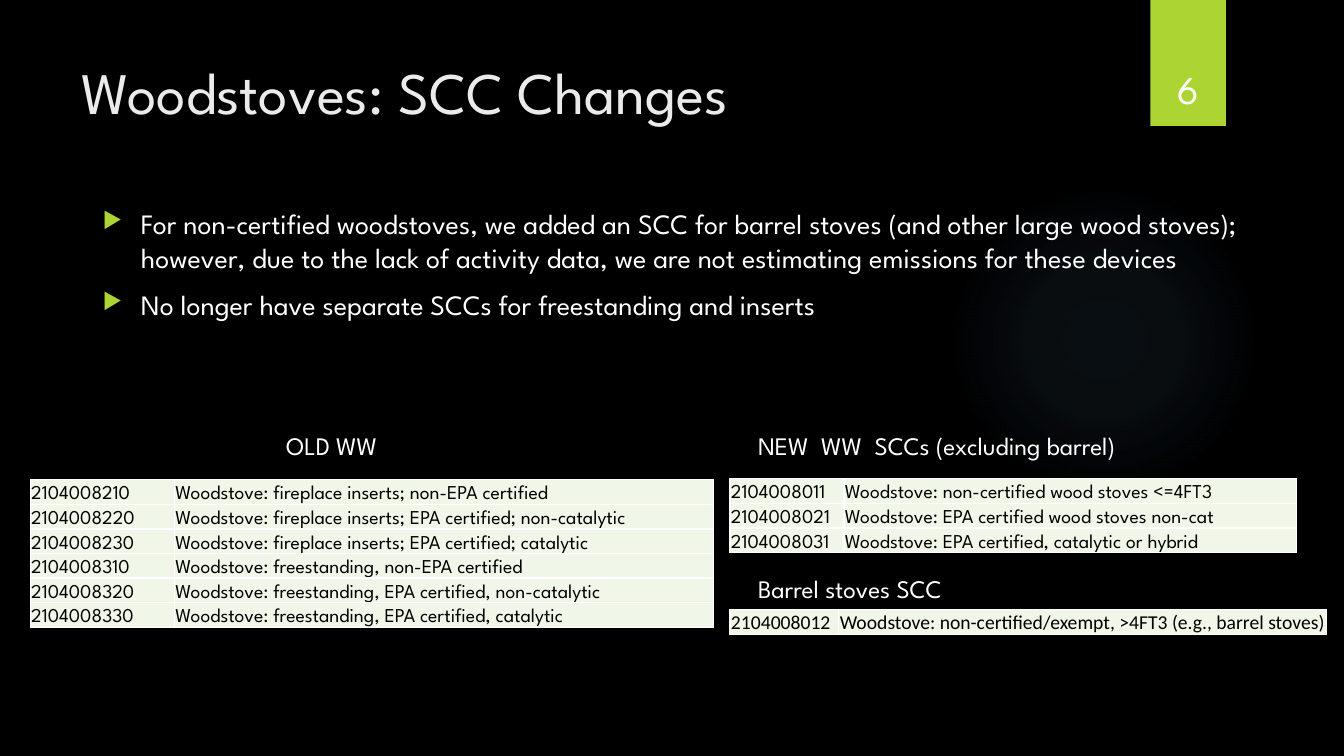
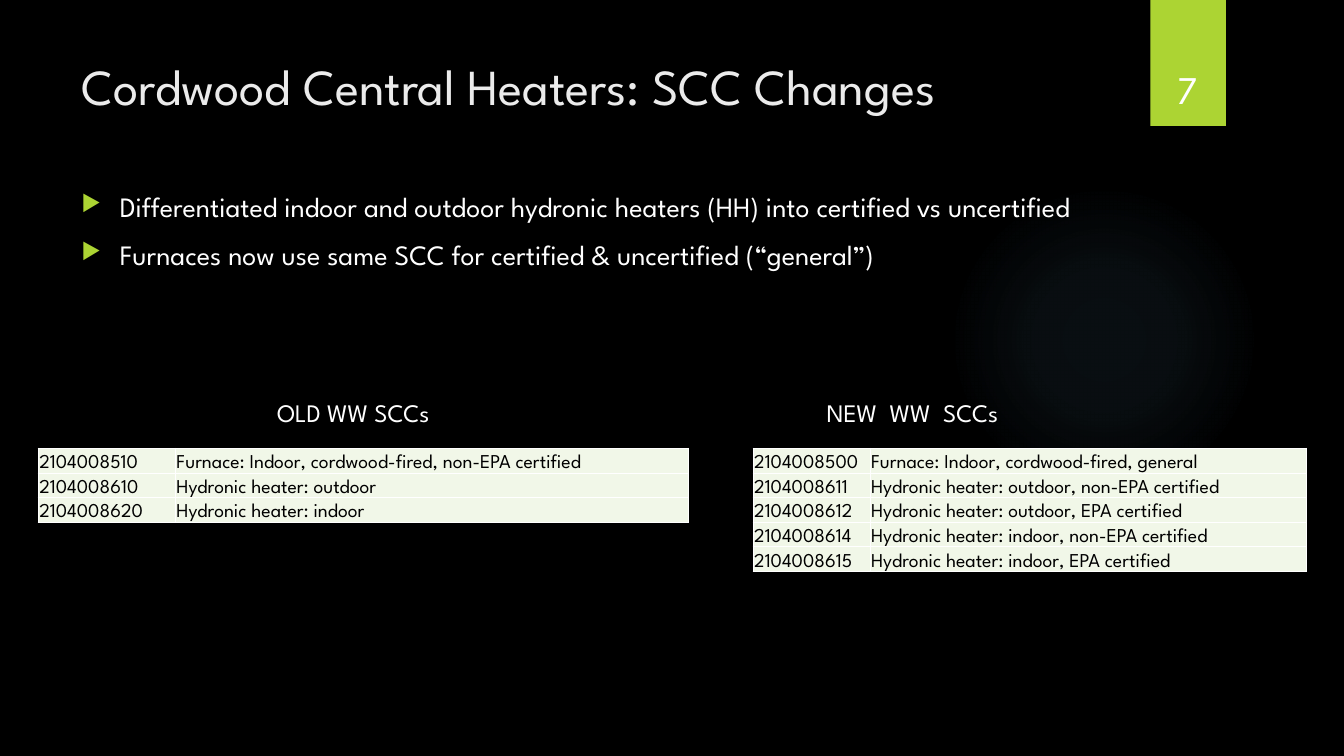
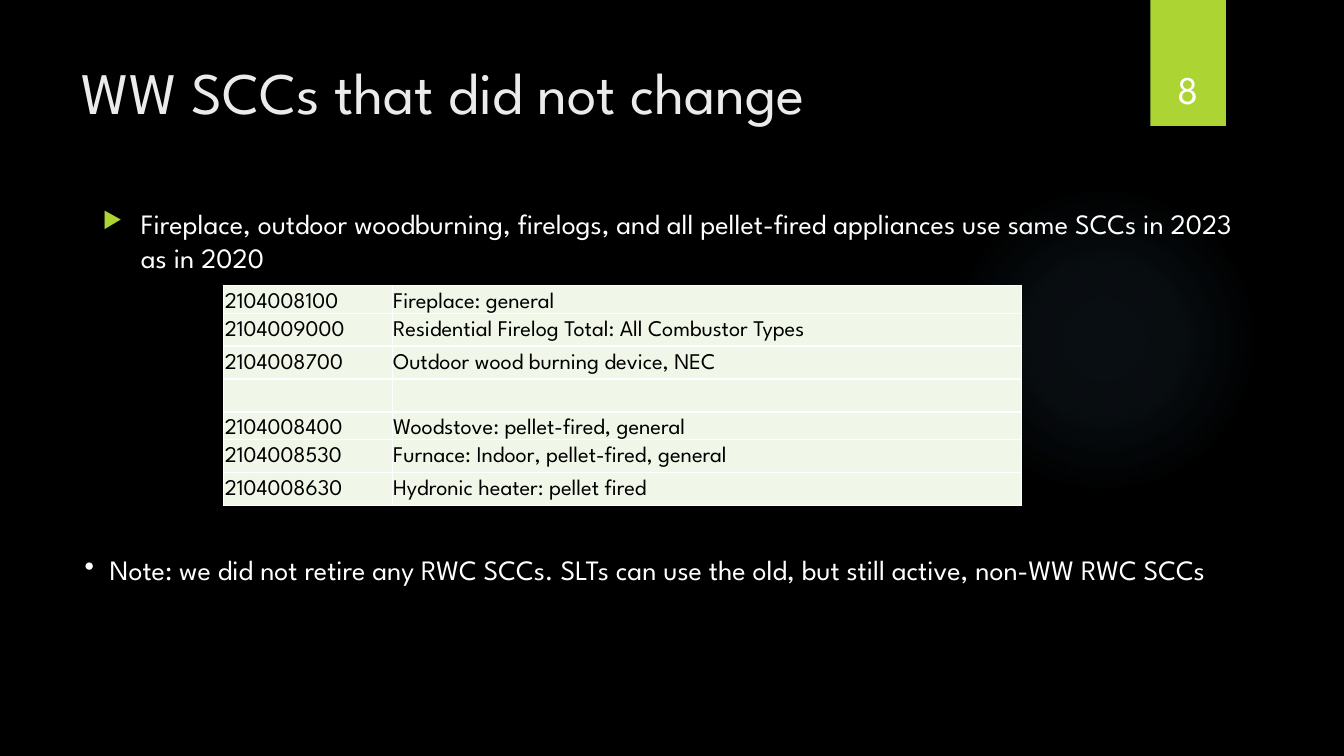
from lxml import etree
from pptx import Presentation
from pptx.dml.color import RGBColor
from pptx.enum.shapes import MSO_SHAPE
from pptx.enum.text import MSO_ANCHOR, PP_ALIGN
from pptx.oxml import parse_xml
from pptx.oxml.ns import qn
from pptx.util import Pt

# Scale: 100 px to the inch
PX = 9144
SLIDE_SIZE = (1333, 750)

BLACK = RGBColor(0x00, 0x00, 0x00)
WHITE = RGBColor(0xFF, 0xFF, 0xFF)
TITLE_GREY = RGBColor(0xEB, 0xEB, 0xEB)
LIME = RGBColor(0xAC, 0xD4, 0x33)
PALE_GREEN = RGBColor(0xF1, 0xF7, 0xE8)
GLOW_BLUE = RGBColor(0x7A, 0xC4, 0xF0)

FONT = "League Spartan"
TABLE_FONT_ALT = "Calibri"
OVAL, RECTANGLE = MSO_SHAPE.OVAL, MSO_SHAPE.RECTANGLE
TOP, BOTTOM = MSO_ANCHOR.TOP, MSO_ANCHOR.BOTTOM
LEFT, CENTER = PP_ALIGN.LEFT, PP_ALIGN.CENTER
DRAWING_NS = "http://schemas.openxmlformats.org/drawingml/2006/main"

# Shared layout: left, top, width, height
GLOW_BOX = (941, 183, 308, 308)
GLOW_STOPS = ((0, 7), (36, 6), (69, 0))  # position %, opacity %
BAND_BOX = (1141, 0, 75, 125)
NUMBER_BOX = (1132, 32, 92, 84)
TITLE_POSITION = (71, 50)
TITLE_HEIGHT = 153
LABEL_HEIGHT = 40
ROW_HEIGHT = 21
CELL_MARGIN = 1

# Bullet styles: character, indent px, colour, size %, line spacing
ARROW_BULLET = ("▶", 38, LIME, 80, None)
DOT_BULLET = ("•", 25, WHITE, 100, 0.9)

# Content
SLIDES = [
    {
        "number": 6,
        "title": ("Woodstoves: SCC Changes", 42, 1029),
        "lists": [((92, 200, 1150, 227), ARROW_BULLET, [
            "For non-certified woodstoves, we added an SCC for barrel stoves (and other large "
            "wood stoves); however, due to the lack of activity data, we are not estimating "
            "emissions for these devices",
            "No longer have separate SCCs for freestanding and inserts",
        ])],
        "labels": [
            ("OLD WW", 274, 422, 143),
            ("NEW  WW  SCCs (excluding barrel)", 742, 422, 463),
            ("Barrel stoves SCC", 742, 564, 464),
        ],
        "tables": [
            {"at": (724, 475), "columns": (113, 449), "rows": [
                ("2104008011", "Woodstove: non-certified wood stoves <=4FT3"),
                ("2104008021", "Woodstove: EPA certified wood stoves non-cat"),
                ("2104008031", "Woodstove: EPA certified, catalytic or hybrid"),
            ]},
            {"at": (30, 476), "columns": (143, 535), "rows": [
                ("2104008210", "Woodstove: fireplace inserts; non-EPA certified"),
                ("2104008220", "Woodstove: fireplace inserts; EPA certified; non-catalytic"),
                ("2104008230", "Woodstove: fireplace inserts; EPA certified; catalytic"),
                ("2104008310", "Woodstove: freestanding, non-EPA certified"),
                ("2104008320", "Woodstove: freestanding, EPA certified, non-catalytic"),
                ("2104008330", "Woodstove: freestanding, EPA certified, catalytic"),
            ]},
            {"at": (724, 605), "columns": (108, 484), "font": TABLE_FONT_ALT, "rows": [
                ("2104008012", "Woodstove: non-certified/exempt, >4FT3 (e.g., barrel stoves)"),
            ]},
        ],
    },
    {
        "number": 7,
        "title": ("Cordwood Central Heaters: SCC Changes", 36, 1062),
        "lists": [((71, 183, 1150, 145), ARROW_BULLET, [
            "Differentiated indoor and outdoor hydronic heaters (HH) into certified vs uncertified",
            "Furnaces now use same SCC for certified & uncertified (“general”)",
        ])],
        "labels": [
            ("OLD WW SCCs", 265, 389, 224),
            ("NEW  WW  SCCs", 810, 389, 463),
        ],
        "tables": [
            {"at": (747, 445), "columns": (116, 433), "heights": (21, 17, 21, 6, 21), "rows": [
                ("2104008500", "Furnace: Indoor, cordwood-fired, general"),
                ("2104008611", "Hydronic heater: outdoor, non-EPA certified"),
                ("2104008612", "Hydronic heater: outdoor, EPA certified"),
                ("2104008614", "Hydronic heater: indoor, non-EPA certified"),
                ("2104008615", "Hydronic heater: indoor, EPA certified"),
            ]},
            {"at": (38, 445), "columns": (136, 509), "heights": (18, 21, 21), "rows": [
                ("2104008510", "Furnace: Indoor, cordwood-fired, non-EPA certified"),
                ("2104008610", "Hydronic heater: outdoor"),
                ("2104008620", "Hydronic heater: indoor"),
            ]},
        ],
    },
    {
        "number": 8,
        "title": ("WW SCCs that did not change", 42, 1029),
        "lists": [
            ((92, 200, 1150, 83), ARROW_BULLET, [
                "Fireplace, outdoor woodburning, firelogs, and all pellet-fired appliances use "
                "same SCCs in 2023 as in 2020",
            ]),
            ((74, 547, 1150, 123), DOT_BULLET, [
                "Note: we did not retire any RWC SCCs. SLTs can use the old, but still active, "
                "non-WW RWC SCCs",
            ]),
        ],
        "labels": [],
        "tables": [
            {"at": (222, 283), "columns": (167, 624), "size": 16,
             "bottoms": (0, 5, 5, 5, 0, 5, 5), "rows": [
                 ("2104008100", "Fireplace: general"),
                 ("2104009000", "Residential Firelog Total: All Combustor Types"),
                 ("2104008700", "Outdoor wood burning device, NEC"),
                 ("", ""),
                 ("2104008400", "Woodstove: pellet-fired, general"),
                 ("2104008530", "Furnace: Indoor, pellet-fired, general"),
                 ("2104008630", "Hydronic heater: pellet fired"),
             ]},
        ],
    },
]


def emu(lengths):
    return [length * PX for length in lengths]


def add_run(paragraph, text, size, color, font=FONT):
    run = paragraph.add_run()
    run.text = text
    run.font.size = Pt(size)
    run.font.name = font
    run.font.color.rgb = color


def add_frame(slide, box, anchor=TOP):
    frame = slide.shapes.add_textbox(*emu(box)).text_frame
    frame.word_wrap = True
    frame.vertical_anchor = anchor
    return frame


def add_text(slide, box, text, size, color, anchor=TOP, align=LEFT):
    paragraph = add_frame(slide, box, anchor).paragraphs[0]
    paragraph.alignment = align
    add_run(paragraph, text, size, color)


def add_plain_shape(slide, kind, box):
    shape = slide.shapes.add_shape(kind, *emu(box))
    shape.shadow.inherit = False
    shape.line.fill.background()
    return shape


# Backdrop shared by all slides
def add_backdrop(slide):
    glow = add_plain_shape(slide, OVAL, GLOW_BOX)
    stops = "".join(
        f'<a:gs pos="{position * 1000}"><a:srgbClr val="{GLOW_BLUE}">'
        f'<a:alpha val="{opacity * 1000}"/></a:srgbClr></a:gs>'
        for position, opacity in GLOW_STOPS)
    gradient = parse_xml(
        f'<a:gradFill xmlns:a="{DRAWING_NS}" rotWithShape="1"><a:gsLst>{stops}</a:gsLst>'
        '<a:path path="circle"><a:fillToRect l="50000" t="50000" r="50000" b="50000"/>'
        '</a:path></a:gradFill>')
    glow._element.spPr.find(qn("a:prstGeom")).addnext(gradient)

    band = add_plain_shape(slide, RECTANGLE, BAND_BOX)
    band.fill.solid()
    band.fill.fore_color.rgb = LIME


# Bulleted lists
def set_bullet(paragraph, character, indent, color, percent):
    properties = paragraph._p.get_or_add_pPr()
    properties.set("marL", str(indent * PX))
    properties.set("indent", str(-indent * PX))
    bullet_color = etree.SubElement(properties, qn("a:buClr"))
    etree.SubElement(bullet_color, qn("a:srgbClr"), val=str(color))
    etree.SubElement(properties, qn("a:buSzPct"), val=str(percent * 1000))
    etree.SubElement(properties, qn("a:buChar"), char=character)


def add_list(slide, box, bullet, items):
    *bullet_style, line_spacing = bullet
    frame = add_frame(slide, box)
    for index, item in enumerate(items):
        paragraph = frame.add_paragraph() if index else frame.paragraphs[0]
        set_bullet(paragraph, *bullet_style)
        if line_spacing:
            paragraph.line_spacing = line_spacing
        if index:
            paragraph.space_before = Pt(10)
        add_run(paragraph, item, 20, WHITE)


# Code tables
def set_borders(cell):
    properties = cell._tc.get_or_add_tcPr()
    for side in ("lnL", "lnR", "lnT", "lnB"):
        line = etree.SubElement(properties, qn(f"a:{side}"), w=str(Pt(1)))
        fill = etree.SubElement(line, qn("a:solidFill"))
        etree.SubElement(fill, qn("a:srgbClr"), val=str(WHITE))


def fill_cell(cell, text, size, font, bottom):
    set_borders(cell)
    cell.fill.solid()
    cell.fill.fore_color.rgb = PALE_GREEN
    cell.margin_left = cell.margin_right = cell.margin_top = CELL_MARGIN * PX
    cell.margin_bottom = bottom * PX
    cell.vertical_anchor = BOTTOM
    paragraph = cell.text_frame.paragraphs[0]
    if text:
        add_run(paragraph, text, size, BLACK, font)
    else:
        # An empty cell keeps the row height of the table's text size
        end = etree.SubElement(paragraph._p, qn("a:endParaRPr"), sz=str(size * 100))
        etree.SubElement(end, qn("a:latin"), typeface=font)


def add_code_table(slide, at, columns, rows, size=14, font=FONT, heights=None, bottoms=None):
    heights = heights or [ROW_HEIGHT] * len(rows)
    bottoms = bottoms or [0] * len(rows)
    box = (*at, sum(columns), sum(heights))
    table = slide.shapes.add_table(len(rows), len(columns), *emu(box)).table
    table.first_row = table.horz_banding = False
    for column, width in zip(table.columns, columns):
        column.width = width * PX
    for row, texts, height, bottom in zip(table.rows, rows, heights, bottoms):
        row.height = height * PX
        for cell, text in zip(row.cells, texts):
            fill_cell(cell, text, size, font, bottom)


def build_slide(presentation, content):
    slide = presentation.slides.add_slide(presentation.slide_layouts[6])
    add_backdrop(slide)
    title, size, width = content["title"]
    add_text(slide, (*TITLE_POSITION, width, TITLE_HEIGHT), title, size, TITLE_GREY)
    add_text(slide, NUMBER_BOX, str(content["number"]), 28, WHITE, BOTTOM, CENTER)
    for box, bullet, items in content["lists"]:
        add_list(slide, box, bullet, items)
    for table in content["tables"]:
        add_code_table(slide, **table)
    for text, left, top, label_width in content["labels"]:
        add_text(slide, (left, top, label_width, LABEL_HEIGHT), text, 18, WHITE)


def main():
    presentation = Presentation()
    presentation.slide_width, presentation.slide_height = emu(SLIDE_SIZE)
    background = presentation.slide_master.background.fill
    background.solid()
    background.fore_color.rgb = BLACK
    for content in SLIDES:
        build_slide(presentation, content)
    presentation.save("out.pptx")


if __name__ == "__main__":
    main()
